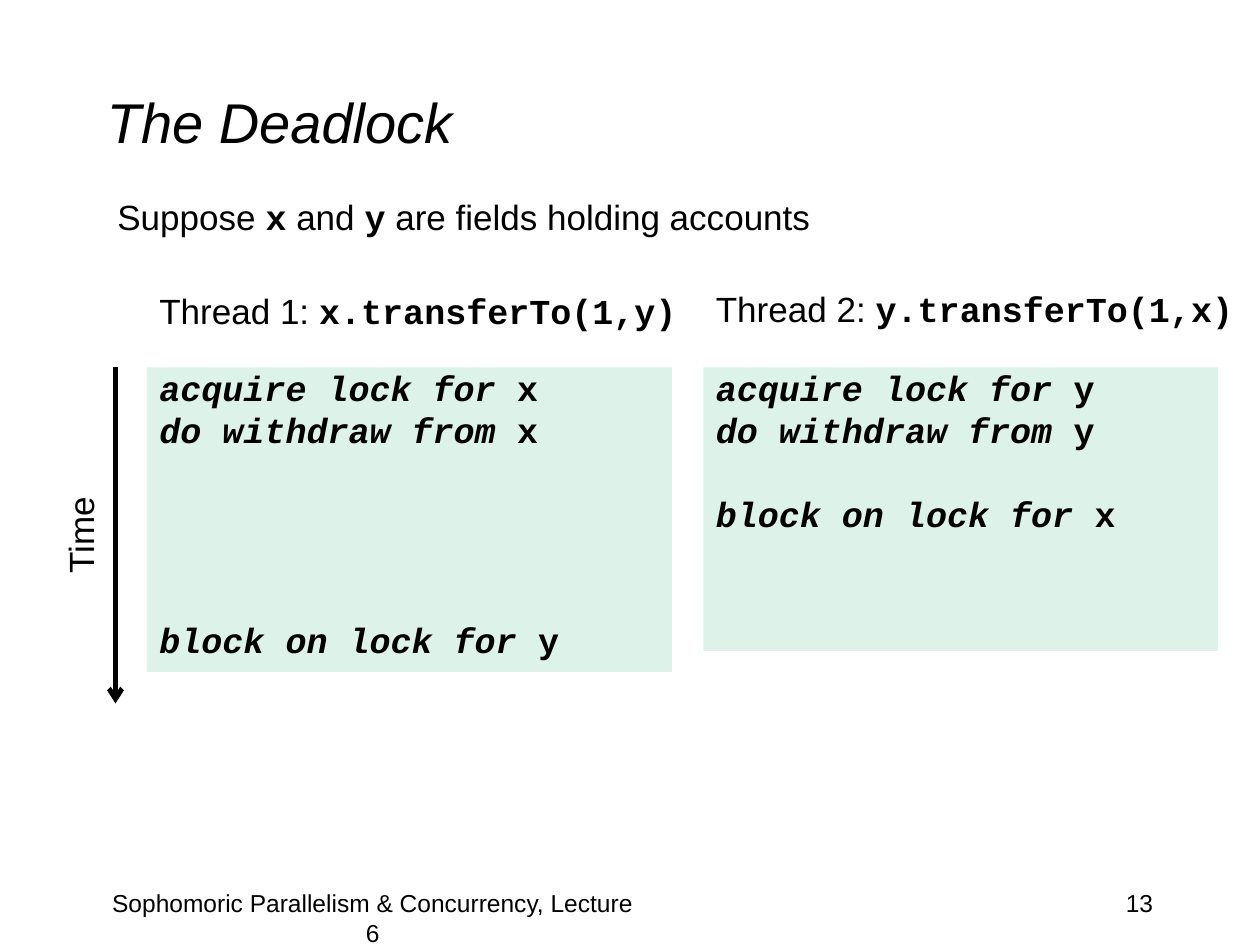
from lxml.etree import SubElement
from pptx import Presentation
from pptx.dml.color import RGBColor
from pptx.enum.shapes import MSO_CONNECTOR, MSO_SHAPE
from pptx.enum.text import MSO_ANCHOR, PP_ALIGN
from pptx.oxml.ns import qn
from pptx.util import Pt

# Content: runs are (text, style)
PLAIN, CODE, STEP, TITLE = "plain", "code", "step", "title"
STYLES = {  # font, bold, italic
    PLAIN: ("Arial", False, False),
    CODE: ("Courier New", True, False),
    STEP: ("Courier New", True, True),
    TITLE: ("Arial", False, True),
}
INTRO = [("Suppose ", PLAIN), ("x", CODE), (" and ", PLAIN), ("y", CODE),
         (" are fields holding accounts", PLAIN)]
# Each step is (time slot, action, account)
THREADS = [
    {"name": "Thread 1: ", "call": "x.transferTo(1,y)",
     "label": (84, 162, 312.5, 31.5), "box": (84, 210, 300, 174),
     "steps": [(0, "acquire lock for ", "x"), (1, "do withdraw from ", "x"),
               (6, "block on lock for ", "y")]},
    {"name": "Thread 2: ", "call": "y.transferTo(1,x)",
     "label": (402, 160.5, 318, 31.5), "box": (402, 210, 294, 162),
     "steps": [(2, "acquire lock for ", "y"), (3, "do withdraw from ", "y"),
               (5, "block on lock for ", "x")]},
]
LINE_HEIGHT, LINE_GAP = 20, 4


def color(value):
    return RGBColor.from_string(value)


def add_runs(paragraph, runs, size=20):
    paragraph.font.size = Pt(size)
    paragraph.font.color.rgb = color("000000")
    for text, style in runs:
        run = paragraph.add_run()
        run.text = text
        run.font.name, run.font.bold, run.font.italic = STYLES[style]


def add_text(slide, frame, runs, size=20, align=PP_ALIGN.LEFT,
             anchor=MSO_ANCHOR.TOP, space_before=0):
    shape = slide.shapes.add_textbox(*map(Pt, frame))
    shape.text_frame.word_wrap = True
    shape.text_frame.vertical_anchor = anchor
    paragraph = shape.text_frame.paragraphs[0]
    paragraph.alignment = align
    paragraph.space_before = Pt(space_before)
    add_runs(paragraph, runs, size)
    return shape


def add_steps(slide, frame, steps):
    shape = slide.shapes.add_shape(MSO_SHAPE.RECTANGLE, *map(Pt, frame))
    shape.shadow.inherit = False
    shape.fill.solid()
    shape.fill.fore_color.rgb = color("DDF3EA")
    shape.line.fill.background()
    text_frame = shape.text_frame
    text_frame.vertical_anchor = MSO_ANCHOR.TOP
    next_slot = 0
    for index, (slot, action, account) in enumerate(steps):
        paragraph = text_frame.add_paragraph() if index else text_frame.paragraphs[0]
        paragraph.alignment = PP_ALIGN.LEFT
        paragraph.line_spacing = Pt(LINE_HEIGHT)
        # Skipped time slots become space above the step
        skipped = slot - next_slot
        paragraph.space_before = Pt(LINE_GAP + skipped * (LINE_HEIGHT + LINE_GAP))
        add_runs(paragraph, [(action, STEP), (account, CODE)])
        next_slot = slot + 1


def add_time_arrow(slide):
    arrow = slide.shapes.add_connector(
        MSO_CONNECTOR.STRAIGHT, Pt(66), Pt(210), Pt(66), Pt(402))
    arrow.line.color.rgb = color("000000")
    arrow.line.width = Pt(2.75)
    SubElement(arrow.line._get_or_add_ln(), qn("a:tailEnd"), type="arrow")
    SubElement(arrow._element.spPr, qn("a:effectLst"))
    label = add_text(slide, (16.5, 289.5, 59, 31.5), [("Time", PLAIN)])
    label.rotation = 270


def main():
    presentation = Presentation()
    presentation.slide_width, presentation.slide_height = Pt(720), Pt(540)
    slide = presentation.slides.add_slide(presentation.slide_layouts[6])

    # Title and introduction
    add_text(slide, (54, 24, 612, 90), [("The Deadlock", TITLE)], 32,
             anchor=MSO_ANCHOR.MIDDLE)
    add_text(slide, (60, 108, 612, 48), INTRO, space_before=LINE_GAP)

    # Threads along the time axis
    for thread in THREADS:
        add_steps(slide, thread["box"], thread["steps"])
        add_text(slide, thread["label"],
                 [(thread["name"], PLAIN), (thread["call"], CODE)])
    add_time_arrow(slide)

    # Footer
    add_text(slide, (54, 504, 318, 36),
             [("Sophomoric Parallelism & Concurrency, Lecture 6", PLAIN)],
             14, PP_ALIGN.CENTER)
    add_text(slide, (516, 504, 150, 36), [("13", PLAIN)], 14, PP_ALIGN.RIGHT)

    presentation.save("out.pptx")


if __name__ == "__main__":
    main()
